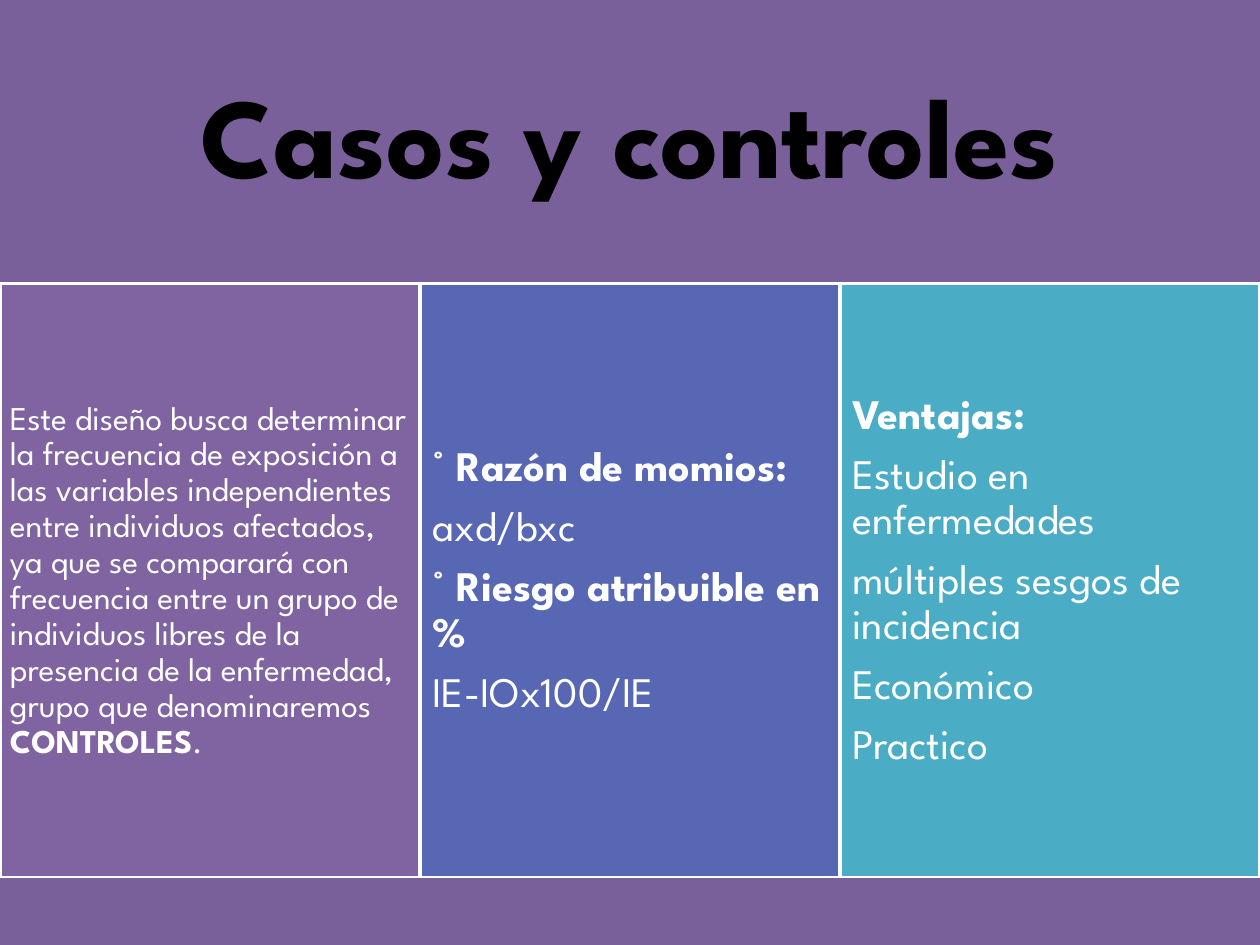
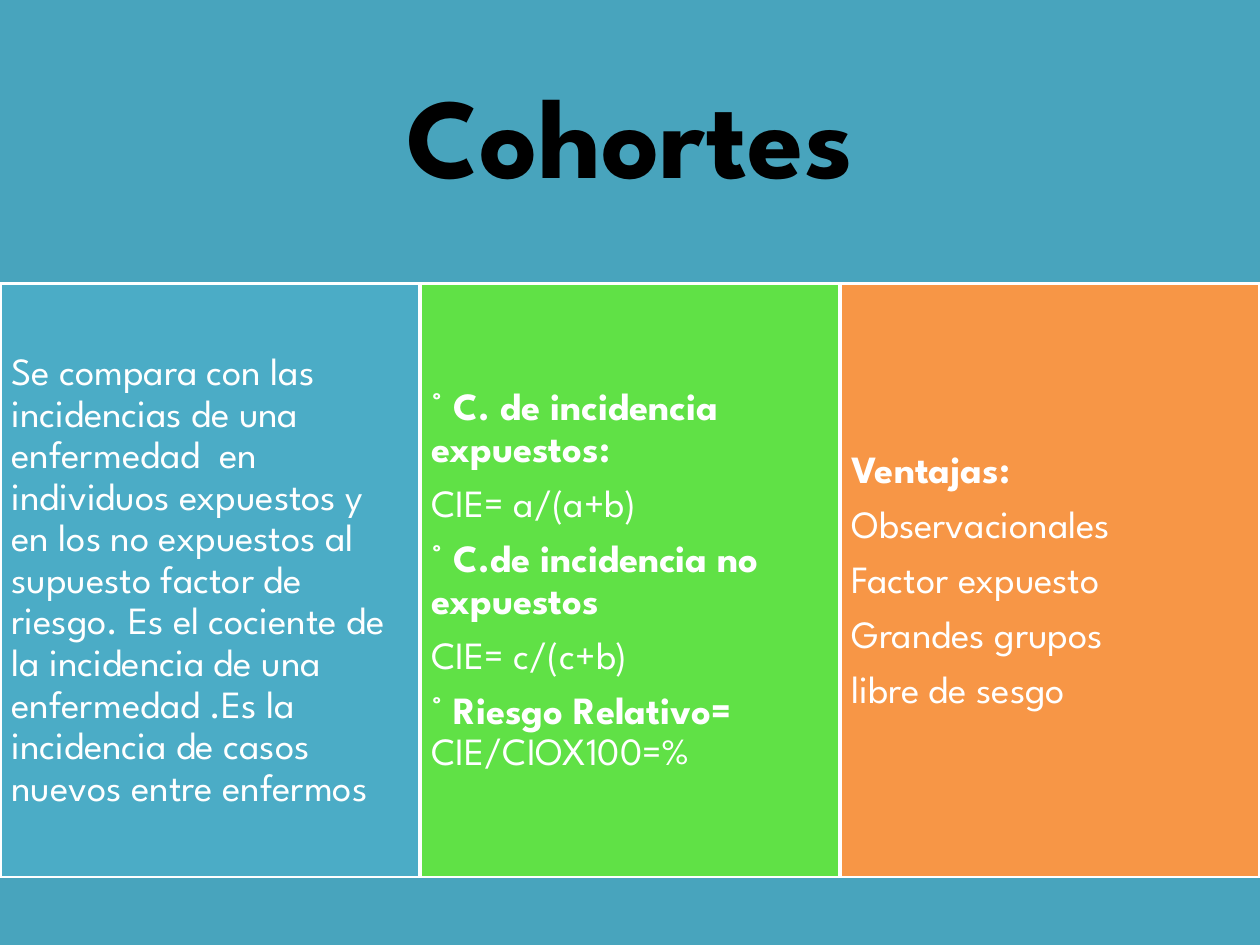
"""Build two study-design slides, each with a title band, three columns and a footer band."""
from pptx import Presentation
from pptx.dml.color import RGBColor
from pptx.enum.shapes import MSO_SHAPE
from pptx.enum.text import MSO_ANCHOR, PP_ALIGN
from pptx.util import Inches, Pt

FONT, WHITE, BLACK = "League Spartan", "FFFFFF", "000000"
WIDTH, HEIGHT = 10, 7.5
TITLE_H, COLUMN_H = 2.25, 4.72
TITLE_SIZE = 65

# Each paragraph is a list of (text, bold) runs.
SLIDES = [
    {
        "title": "Casos y controles",
        "band": "7A609B",
        "columns": [
            ("8064A2", 19, [
                [("Este diseño busca determinar la frecuencia de exposición a las variables "
                  "independientes entre individuos afectados, ya que se comparará con  "
                  "frecuencia entre un grupo de individuos libres de la presencia de la "
                  "enfermedad, grupo que denominaremos ", False),
                 ("CONTROLES", True), (".", False)],
            ]),
            ("5767B4", 24, [
                [("° Razón de momios:", True)],
                [("axd/bxc", False)],
                [("° Riesgo atribuible en %", True)],
                [("IE-IOx100/IE", False)],
            ]),
            ("4BACC6", 24, [
                [("Ventajas:", True)],
                [("Estudio en enfermedades", False)],
                [("múltiples sesgos de incidencia", False)],
                [("Económico", False)],
                [("Practico", False)],
            ]),
        ],
    },
    {
        "title": "Cohortes",
        "band": "48A4BD",
        "columns": [
            ("4BACC6", 22, [
                [("Se compara con las incidencias de una enfermedad  en individuos expuestos "
                  "y en los no expuestos al supuesto factor de riesgo. Es el cociente de la "
                  "incidencia de una enfermedad .Es la incidencia de casos nuevos entre "
                  "enfermos", False)],
            ]),
            ("60E146", 22, [
                [("° C. de incidencia expuestos:", True)],
                [("CIE= a/(a+b)", False)],
                [("° C.de incidencia no expuestos", True)],
                [("CIE= c/(c+b)", False)],
                [("° Riesgo Relativo=", True), (" CIE/CIOX100=%", False)],
            ]),
            ("F79646", 22, [
                [("Ventajas:", True)],
                [("Observacionales", False)],
                [("Factor expuesto", False)],
                [("Grandes grupos", False)],
                [("libre de sesgo", False)],
            ]),
        ],
    },
]


def rgb(code):
    return RGBColor.from_string(code)


def set_all(target, values):
    for name, value in values.items():
        setattr(target, name, value)


def add_box(s, box, fill, line=None):
    sp = s.shapes.add_shape(MSO_SHAPE.RECTANGLE, *map(Inches, box))
    sp.shadow.inherit = False
    sp.fill.solid()
    sp.fill.fore_color.rgb = rgb(fill)
    if line:
        sp.line.color.rgb = rgb(line)
        sp.line.width = Pt(2)
    else:
        sp.line.fill.background()
    return sp


def write(sp, paragraphs, size, color, align=PP_ALIGN.LEFT):
    tf = sp.text_frame
    sides = ("left", "top", "right", "bottom")
    set_all(tf, {f"margin_{side}": Inches(size / 240) for side in sides})
    set_all(tf, {"word_wrap": True, "vertical_anchor": MSO_ANCHOR.MIDDLE})
    for i, runs in enumerate(paragraphs):
        p = tf.add_paragraph() if i else tf.paragraphs[0]
        set_all(p, {"alignment": align, "line_spacing": 0.9, "space_after": Pt(0.35 * size)})
        for text, bold in runs:
            r = p.add_run()
            r.text = text
            set_all(r.font, {"name": FONT, "size": Pt(size), "bold": bold})
            r.font.color.rgb = rgb(color)


def add_study(prs, study):
    s = prs.slides.add_slide(prs.slide_layouts[6])
    title = add_box(s, (0, 0, WIDTH, TITLE_H), study["band"])
    write(title, [[(study["title"], True)]], TITLE_SIZE, BLACK, PP_ALIGN.CENTER)
    column_w = WIDTH / len(study["columns"])
    for i, (fill, size, paragraphs) in enumerate(study["columns"]):
        column = add_box(s, (i * column_w, TITLE_H, column_w, COLUMN_H), fill, WHITE)
        write(column, paragraphs, size, WHITE)
    footer_top = TITLE_H + COLUMN_H
    add_box(s, (0, footer_top, WIDTH, HEIGHT - footer_top), study["band"])


def main():
    prs = Presentation()
    set_all(prs, {"slide_width": Inches(WIDTH), "slide_height": Inches(HEIGHT)})
    for study in SLIDES:
        add_study(prs, study)
    prs.save("out.pptx")


if __name__ == "__main__":
    main()
